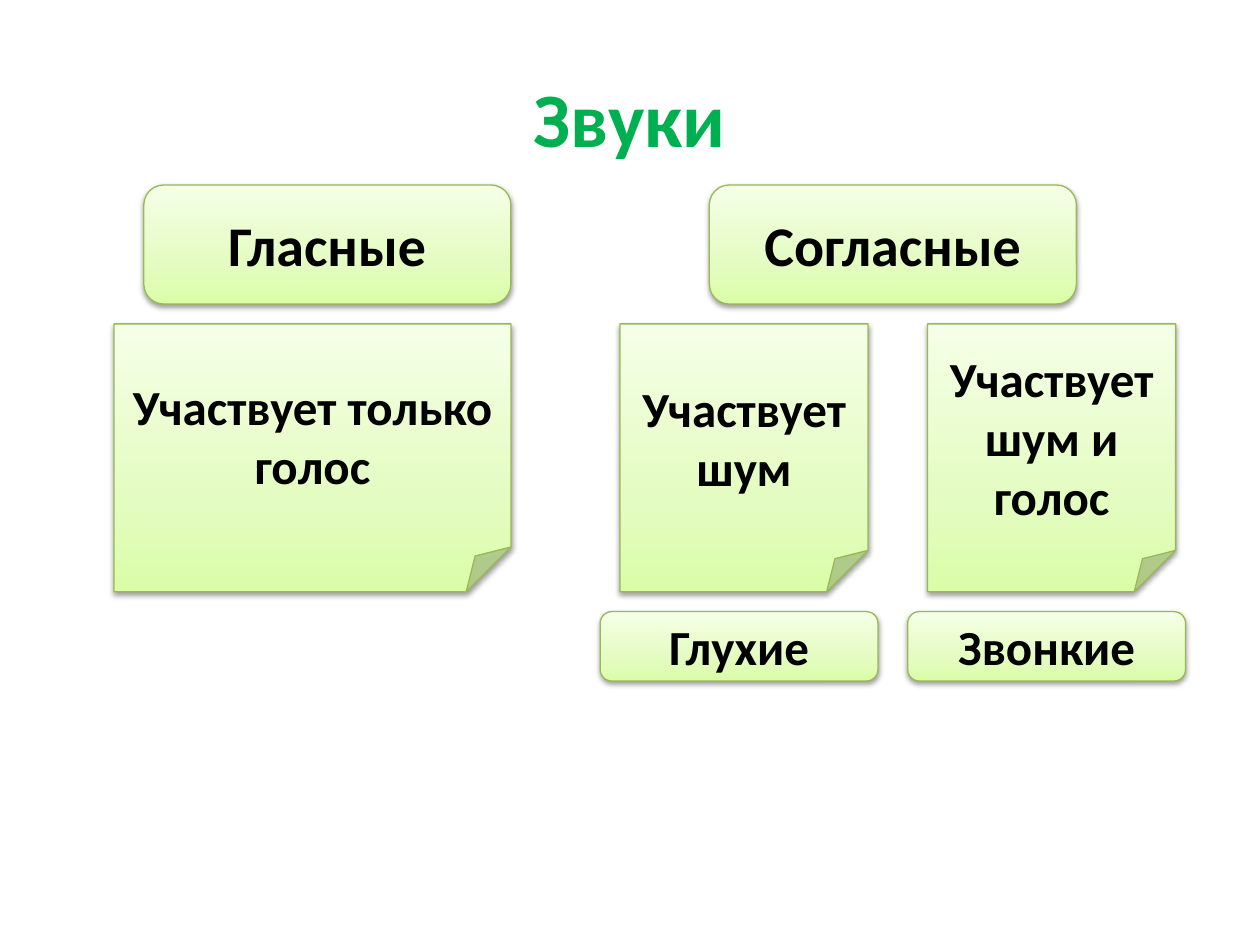
import copy
from dataclasses import dataclass

import pptx
import pptx.dml.color
import pptx.enum.shapes
import pptx.enum.text
import pptx.oxml
import pptx.oxml.ns
import pptx.util

Cm = pptx.util.Cm
Shape = pptx.enum.shapes.MSO_SHAPE


@dataclass(frozen=True)
class Theme:
    font: str = "Calibri"
    title_color: str = "00B050"
    text_color: str = "000000"
    line_color: str = "98B955"
    gradient: tuple = ((0, "DAFDA7"), (0.35, "E4FCC2"), (1, "F5FFE7"))
    title_size: int = 44
    heading_size: int = 32
    body_size: int = 28
    line_width: float = 0.75


def rgb(value):
    return pptx.dml.color.RGBColor.from_string(value)


class SlideBuilder:
    def __init__(self, s, theme):
        self.s = s
        self.theme = theme

    def set_text(self, sp, text, size, color):
        tf = sp.text_frame
        tf.text = text
        tf.word_wrap = True
        tf.vertical_anchor = pptx.enum.text.MSO_ANCHOR.MIDDLE
        p = tf.paragraphs[0]
        p.alignment = pptx.enum.text.PP_ALIGN.CENTER
        for r in p.runs:
            r.font.name = self.theme.font
            r.font.size = pptx.util.Pt(size)
            r.font.bold = True
            r.font.color.rgb = rgb(color)

    def title(self, text, left, top, width, height):
        sp = self.s.shapes.title
        sp.left, sp.top, sp.width, sp.height = map(Cm, (left, top, width, height))
        self.set_text(sp, text, self.theme.title_size, self.theme.title_color)

    def paint(self, sp):
        sp.fill.gradient()
        sp.fill.gradient_angle = 90
        stops = sp._element.spPr.find(".//" + pptx.oxml.ns.qn("a:gsLst"))
        stops.insert(1, copy.deepcopy(stops[0]))
        for stop, (position, color) in zip(sp.fill.gradient_stops, self.theme.gradient):
            stop.position = position
            stop.color.rgb = rgb(color)
        sp.line.color.rgb = rgb(self.theme.line_color)
        sp.line.width = pptx.util.Pt(self.theme.line_width)

    def shade(self, sp):
        sp.shadow.inherit = False
        effects = sp._element.spPr.find(pptx.oxml.ns.qn("a:effectLst"))
        effects.append(pptx.oxml.parse_xml(
            f'<a:outerShdw {pptx.oxml.ns.nsdecls("a")} blurRad="40000" dist="20000" '
            'dir="5400000" rotWithShape="0"><a:srgbClr val="000000">'
            '<a:alpha val="38000"/></a:srgbClr></a:outerShdw>'))

    def card(self, kind, text, size, left, top, width, height):
        sp = self.s.shapes.add_shape(kind, *map(Cm, (left, top, width, height)))
        self.paint(sp)
        self.shade(sp)
        self.set_text(sp, text, size, self.theme.text_color)

    def heading(self, text, left):
        self.card(Shape.ROUNDED_RECTANGLE, text, self.theme.heading_size,
                  left, 3.73, 7.4, 2.4)

    def note(self, text, left, width):
        self.card(Shape.FOLDED_CORNER, text, self.theme.body_size,
                  left, 6.53, width, 5.4)

    def label(self, text, left):
        self.card(Shape.ROUNDED_RECTANGLE, text, self.theme.body_size,
                  left, 12.33, 5.6, 1.4)


def main():
    prs = pptx.Presentation()
    prs.slide_width, prs.slide_height = Cm(25.4), Cm(19.05)
    builder = SlideBuilder(prs.slides.add_slide(prs.slide_layouts[5]), Theme())
    builder.title("Звуки", 1.27, 0.76, 22.86, 3.18)
    for text, left in (("Гласные", 2.9), ("Согласные", 14.3)):
        builder.heading(text, left)
    for text, left, width in (("Участвует только голос", 2.3, 8),
                              ("Участвует шум", 12.5, 5),
                              ("Участвует шум и голос", 18.7, 5)):
        builder.note(text, left, width)
    for text, left in (("Глухие", 12.1), ("Звонкие", 18.3)):
        builder.label(text, left)
    prs.save("out.pptx")


if __name__ == "__main__":
    main()
